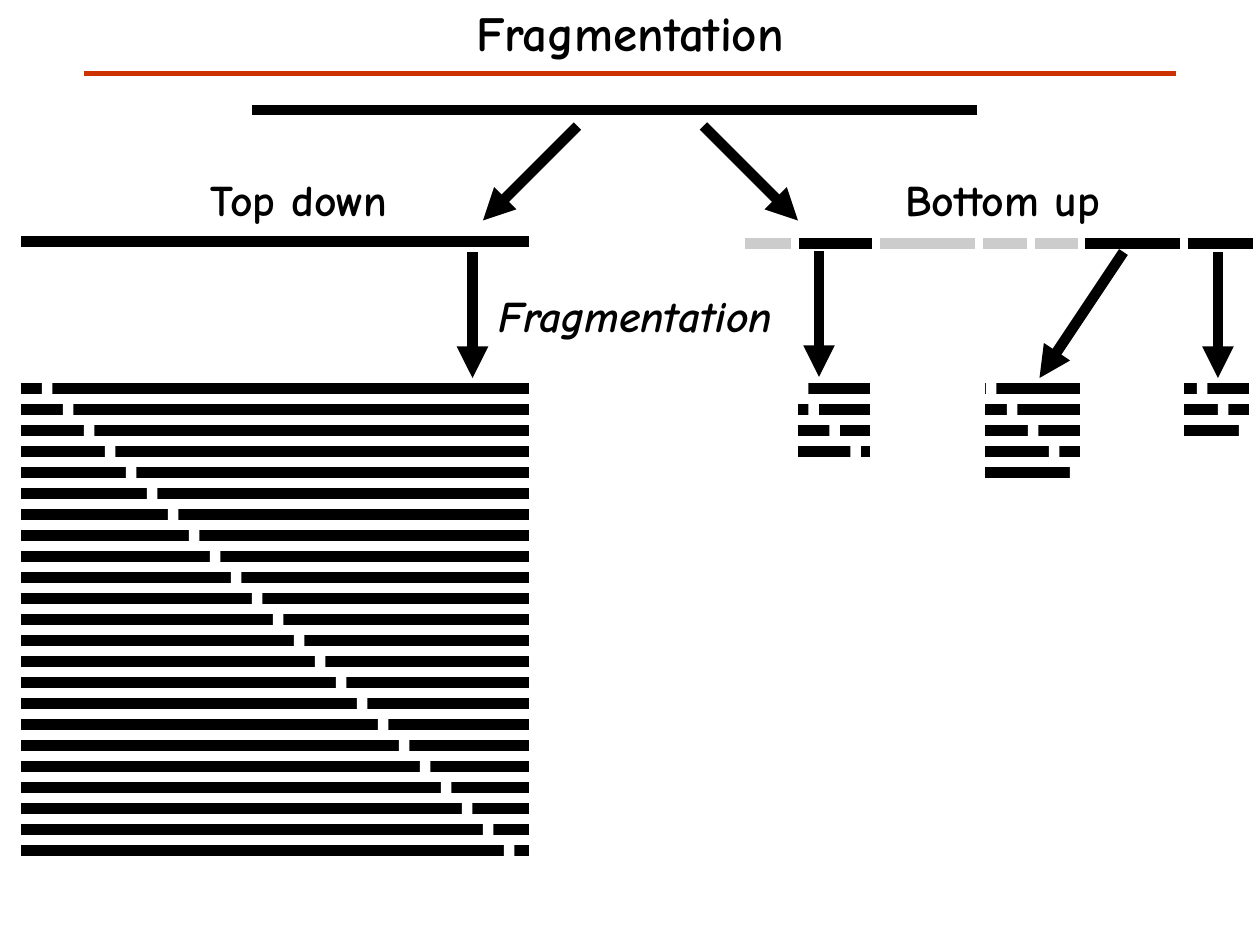
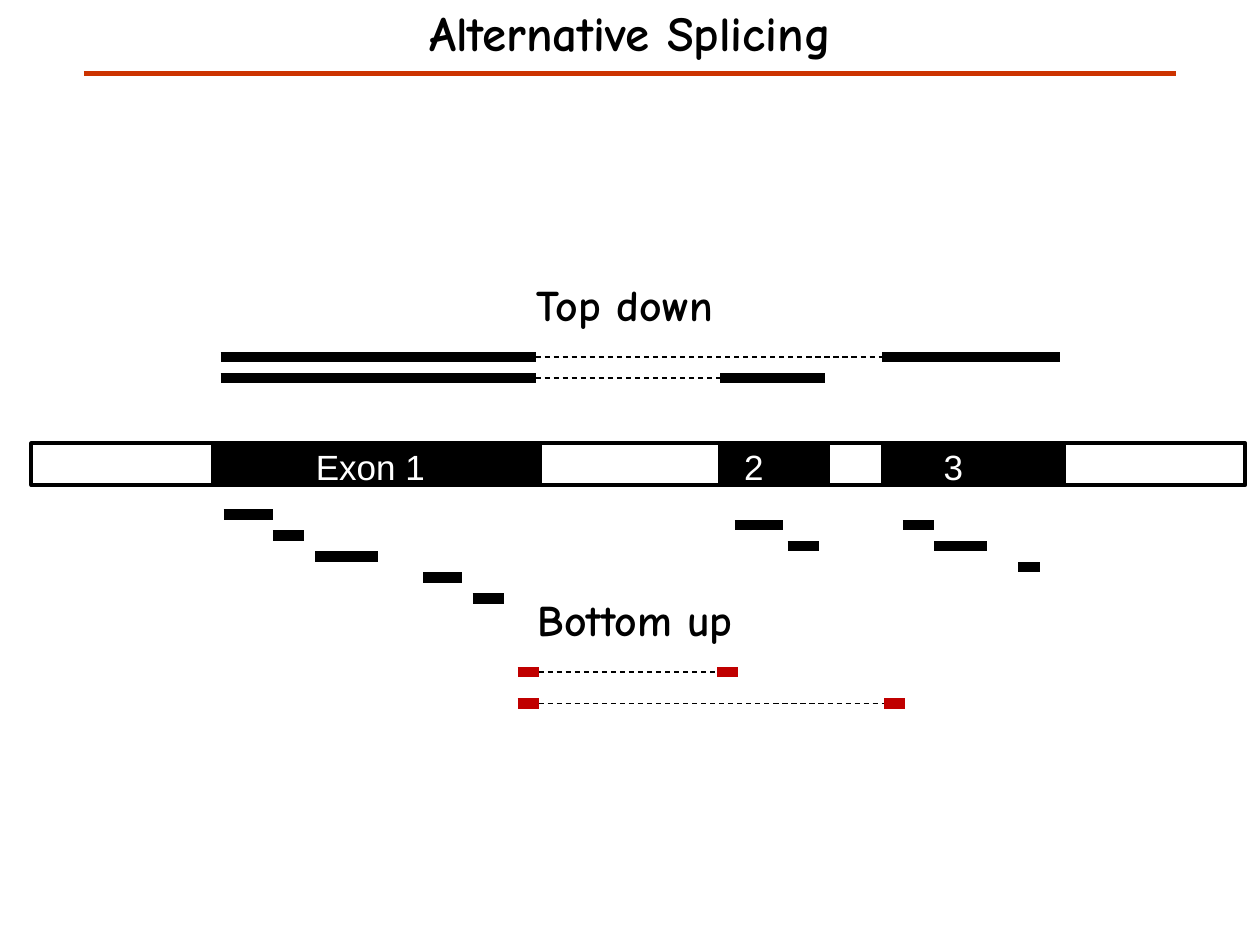
from dataclasses import dataclass
from itertools import pairwise

from lxml.etree import SubElement
from pptx import Presentation
from pptx.dml.color import RGBColor
from pptx.enum.dml import MSO_LINE
from pptx.enum.shapes import MSO_CONNECTOR, MSO_SHAPE
from pptx.enum.text import MSO_ANCHOR, PP_ALIGN
from pptx.oxml.ns import qn
from pptx.util import Pt

PX = 7620  # EMU per px, 120 px to the inch


@dataclass(frozen=True)
class Theme:
    ink: str = "000000"
    paper: str = "FFFFFF"
    rule: str = "CC3300"
    junction: str = "C00000"
    font: str = "Comic Neue"
    exon_font: str = "Arial"
    title_size: int = 28
    label_size: int = 25
    exon_size: int = 20
    bar: float = 6
    cut: float = 4.5
    rule_width: float = 2.5
    outline: float = 2.25
    veil_outline: float = 2
    intron: float = 0.75


T = Theme()
ROW = 20  # distance between stacked bars


def emu(*lengths):
    return [n * PX for n in lengths]


# Basic parts
def line(s, x1, y1, x2, y2, color=T.ink, width=T.bar, dashed=False, arrow=False):
    c = s.shapes.add_connector(MSO_CONNECTOR.STRAIGHT, *emu(x1, y1, x2, y2))
    c.line.color.rgb = RGBColor.from_string(color)
    c.line.width = Pt(width)
    if dashed:
        c.line.dash_style = MSO_LINE.DASH
    sp_pr = c.element.spPr
    if arrow:
        SubElement(sp_pr.find(qn("a:ln")), qn("a:tailEnd"), type="triangle")
    SubElement(sp_pr, qn("a:effectLst"))


def rect(s, x, y, w, h, fill, outline=None, width=T.outline, opacity=100):
    sp = s.shapes.add_shape(MSO_SHAPE.RECTANGLE, *emu(x, y, w, h))
    sp.shadow.inherit = False
    sp.fill.solid()
    sp.fill.fore_color.rgb = RGBColor.from_string(fill)
    if opacity < 100:
        color = sp.element.spPr.find(qn("a:solidFill")).find(qn("a:srgbClr"))
        SubElement(color, qn("a:alpha"), val=str(opacity * 1000))
    if outline:
        sp.line.color.rgb = RGBColor.from_string(outline)
        sp.line.width = Pt(width)
    else:
        sp.line.fill.background()


def text(s, x, y, w, h, words, size=T.label_size, font=T.font, color=T.ink,
         bold=True, italic=False, align=PP_ALIGN.CENTER, anchor=MSO_ANCHOR.MIDDLE):
    tf = s.shapes.add_textbox(*emu(x, y, w, h)).text_frame
    tf.word_wrap = True
    tf.vertical_anchor = anchor
    tf.text = words
    p = tf.paragraphs[0]
    p.alignment = align
    f = p.runs[0].font
    f.name, f.size, f.bold, f.italic = font, Pt(size), bold, italic
    f.color.rgb = RGBColor.from_string(color)


def titled_slide(prs, title):
    s = prs.slides.add_slide(prs.slide_layouts[6])
    text(s, 60, 0, 1080, 60, title, T.title_size)
    line(s, 80, 70, 1120, 70, T.rule, T.rule_width)
    return s


# Fragmentation regions
def fragment_ladder(s, x, y, w, cuts):
    """One bar per cut, each broken at its own offset."""
    for i, cut in enumerate(cuts):
        top = y + i * ROW
        line(s, x, top + ROW // 2, x + w, top + ROW // 2)
        rect(s, x + cut, top, 10, ROW, T.paper)


def digested_protein(s, x, y, w):
    """A bar cut into peptides, with the unobserved ones faded."""
    line(s, x, y, x + w, y)
    for cut in (47, 124, 222, 272, 320, 418):
        line(s, x + cut, y - 9, x + cut, y + 9, T.paper, T.cut)
    for left, width in ((-30, 77), (124, 196)):
        rect(s, x + left, y - 9, width, 46, T.paper, T.paper, T.veil_outline, 80)


def fragmentation_slide(prs):
    s = titled_slide(prs, "Fragmentation")
    line(s, 240, 105, 930, 105)
    line(s, 20, 230, 504, 230)
    digested_protein(s, 710, 232, 483)

    text(s, 110, 160, 350, 60, "Top down")
    text(s, 810, 160, 290, 60, "Bottom up")
    text(s, 430, 270, 350, 60, "Fragmentation", italic=True)

    for ends in ((550, 120, 460, 210), (670, 120, 760, 210),
                 (450, 240, 450, 360), (780, 239, 780, 359),
                 (1070, 240, 990, 360), (1160, 240, 1160, 360)):
        line(s, *ends, arrow=True)

    for x, w, cuts in ((20, 484, range(20, 480, ROW)),
                       (760, 69, (0, 10, 30, 50)),
                       (938, 91, range(1, 91, ROW)),
                       (1128, 62, range(12, 62, ROW))):
        fragment_ladder(s, x, 360, w, cuts)


# Splicing regions
def gene(s, x, y, h):
    """Alternating introns and exons, with the exon names."""
    edges = (0, 173, 484, 656, 759, 811, 983, 1156)
    segments = list(pairwise(edges))
    for fill, part in ((T.paper, segments[::2]), (T.ink, segments[1::2])):
        for left, right in part:
            rect(s, x + left, y, right - left, h, fill, T.ink)
    for left, w, name in ((259, 221, "Exon 1"), (667, 74, "2"), (857, 74, "3")):
        text(s, x + left, y - 4, w, 52, name, T.exon_size, T.exon_font, T.paper,
             bold=False, align=PP_ALIGN.LEFT, anchor=MSO_ANCHOR.TOP)


def spliced_pair(s, y, first, second, color=T.ink):
    """Two bars joined by a dashed intron."""
    for left, right in (first, second):
        line(s, left, y, right, y, color)
    line(s, first[1], y, second[0], y, width=T.intron, dashed=True)


def peptide_steps(s, x, y, spans):
    """Bars stepping down one row at a time."""
    for i, (left, right) in enumerate(spans):
        line(s, x + left, y + i * ROW, x + right, y + i * ROW)


def splicing_slide(prs):
    s = titled_slide(prs, "Alternative Splicing")
    text(s, 450, 260, 290, 60, "Top down")
    text(s, 460, 560, 290, 60, "Bottom up")
    gene(s, 30, 422, 40)

    # Whole isoforms above the gene
    spliced_pair(s, 340, (210, 510), (840, 1010))
    spliced_pair(s, 360, (210, 510), (686, 786))

    # Peptides below each exon
    peptide_steps(s, 213, 490, ((0, 47), (47, 77), (87, 147), (190, 227), (237, 267)))
    peptide_steps(s, 700, 500, ((0, 46), (50, 80)))
    peptide_steps(s, 860, 500, ((0, 30), (30, 80), (110, 130)))

    # Peptides across a splice junction
    spliced_pair(s, 640, (493, 513), (683, 703), T.junction)
    spliced_pair(s, 670, (493, 513), (842, 862), T.junction)


def main():
    prs = Presentation()
    prs.slide_width, prs.slide_height = emu(1200, 900)
    fragmentation_slide(prs)
    splicing_slide(prs)
    prs.save("out.pptx")


if __name__ == "__main__":
    main()
